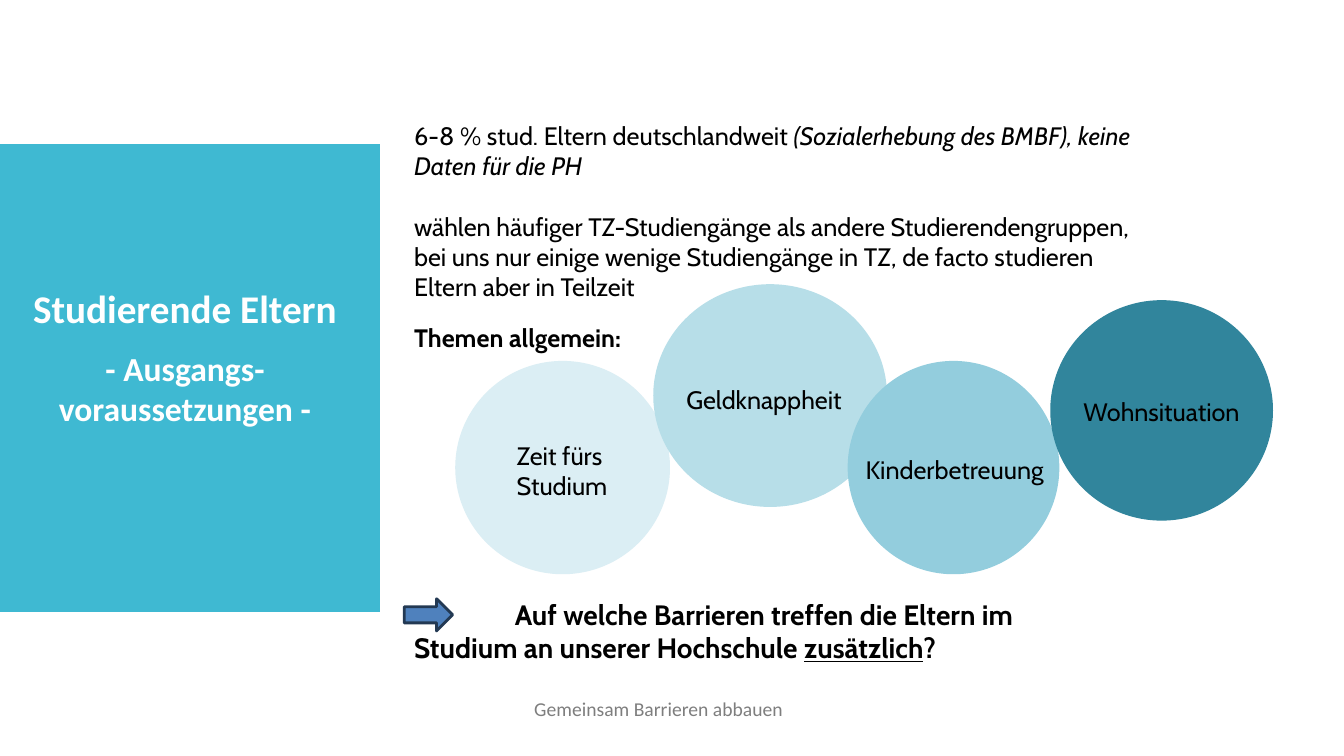
from pptx import Presentation
from pptx import util as u
from pptx.dml import color
from pptx.enum import shapes, text

Pt = u.Pt


def rgb(hex_string):
    return color.RGBColor.from_string(hex_string)


class SlideBuilder:
    BODY_FONT = "Cabin"
    HEAD_FONT = "Calibri"
    BODY_SIZE = 18

    def __init__(self, slide):
        self.slide = slide

    def shape(self, kind, box, fill, line=None, line_width=2):
        figure = self.slide.shapes.add_shape(kind, *map(Pt, box))
        figure.shadow.inherit = False
        figure.fill.solid()
        figure.fill.fore_color.rgb = rgb(fill)
        if line:
            figure.line.color.rgb = rgb(line)
            figure.line.width = Pt(line_width)
        else:
            figure.line.fill.background()
        return figure

    def text_box(self, box, inset=True):
        frame = self.slide.shapes.add_textbox(*map(Pt, box)).text_frame
        frame.word_wrap = True
        frame.auto_size = text.MSO_AUTO_SIZE.SHAPE_TO_FIT_TEXT
        if not inset:
            frame.margin_left = frame.margin_right = 0
            frame.margin_top = frame.margin_bottom = 0
        return frame

    def paragraph(self, frame, *runs, size=BODY_SIZE, font=BODY_FONT,
                  ink="000000", bold=False, before=0, after=0, centred=False):
        """Each run is a string or a (string, font attribute) pair."""
        first = frame.paragraphs[0]
        para = frame.add_paragraph() if first.runs else first
        if before:
            para.space_before = Pt(before)
        if after:
            para.space_after = Pt(after)
        if centred:
            para.alignment = text.PP_ALIGN.CENTER
        para.font.name = font
        para.font.size = Pt(size)
        para.font.bold = bold
        para.font.color.rgb = rgb(ink)
        for entry in runs:
            words, attribute = (entry, None) if isinstance(entry, str) else entry
            run = para.add_run()
            run.text = words
            if attribute:
                setattr(run.font, attribute, True)
        return para


def main():
    deck = Presentation()
    deck.slide_width, deck.slide_height = Pt(960), Pt(540)
    page = SlideBuilder(deck.slides.add_slide(deck.slide_layouts[6]))

    # Title panel
    page.shape(shapes.MSO_SHAPE.RECTANGLE, (0, 103, 271.4, 334), "3FB9D2")
    title = page.text_box((0, 199.4, 264.2, 111.6))
    heading = dict(font=page.HEAD_FONT, ink="FFFFFF", bold=True, centred=True)
    page.paragraph(title, "Studierende Eltern", size=28, after=12, **heading)
    page.paragraph(title, "- Ausgangs-voraussetzungen -", size=24, **heading)

    # Footer
    footer = page.text_box((307, 505.4, 327, 10.8), inset=False)
    motto = page.paragraph(footer, "Gemeinsam Barrieren abbauen", size=14,
                           font=page.HEAD_FONT, ink="7E7E7E", centred=True)
    motto.line_spacing = Pt(9.1)

    # Facts and closing question
    facts = page.text_box((288.7, 82.1, 535, 397.4))
    page.paragraph(facts, "6-8 % stud. Eltern deutschlandweit ",
                   ("(Sozialerhebung des BMBF), keine Daten für die PH", "italic"))
    page.paragraph(facts, "wählen häufiger TZ-Studiengänge als andere "
                   "Studierendengruppen, bei uns nur einige wenige Studiengänge "
                   "in TZ, de facto studieren Eltern aber in Teilzeit", before=21.9)
    page.paragraph(facts, "Themen allgemein:", bold=True, before=14.6)
    question = page.paragraph(facts, size=20, bold=True, before=174.8)
    question._p.get_or_add_pPr().set("marL", "0")
    question._p.get_or_add_pPr().set("indent", str(Pt(72)))
    question.add_run().text = "Auf welche Barrieren treffen die Eltern im"
    question.add_line_break()
    question.add_run().text = "Studium an unserer Hochschule "
    emphasis = question.add_run()
    emphasis.text = "zusätzlich"
    emphasis.font.underline = True
    question.add_run().text = "?"

    # Topic circles: label, circle box, fill, label box
    topics = [
        ("Zeit fürs Studium", (325.2, 257.8, 153.4, 152.4), "DBEEF4",
         (362, 311, 126.7, 70.6)),
        ("Geldknappheit", (466.6, 203, 167, 159.1), "B7DEE8",
         (483.1, 270.7, 140.4, 51.1)),
        ("Kinderbetreuung", (605.5, 257.8, 151.2, 152.4), "93CDDD",
         (611.3, 321.1, 151.2, 51.1)),
        ("Wohnsituation", (750.2, 214.4, 159.1, 157.5), "31859C",
         (766.8, 279.2, 131, 51.1)),
    ]
    for label, circle, fill, label_box in topics:
        page.shape(shapes.MSO_SHAPE.OVAL, circle, fill)
        page.paragraph(page.text_box(label_box), label)

    # Arrow pointing to the question
    page.shape(shapes.MSO_SHAPE.RIGHT_ARROW, (288.7, 427.7, 34.6, 23),
               "4F81BD", line="233953")

    deck.save("out.pptx")


if __name__ == "__main__":
    main()
